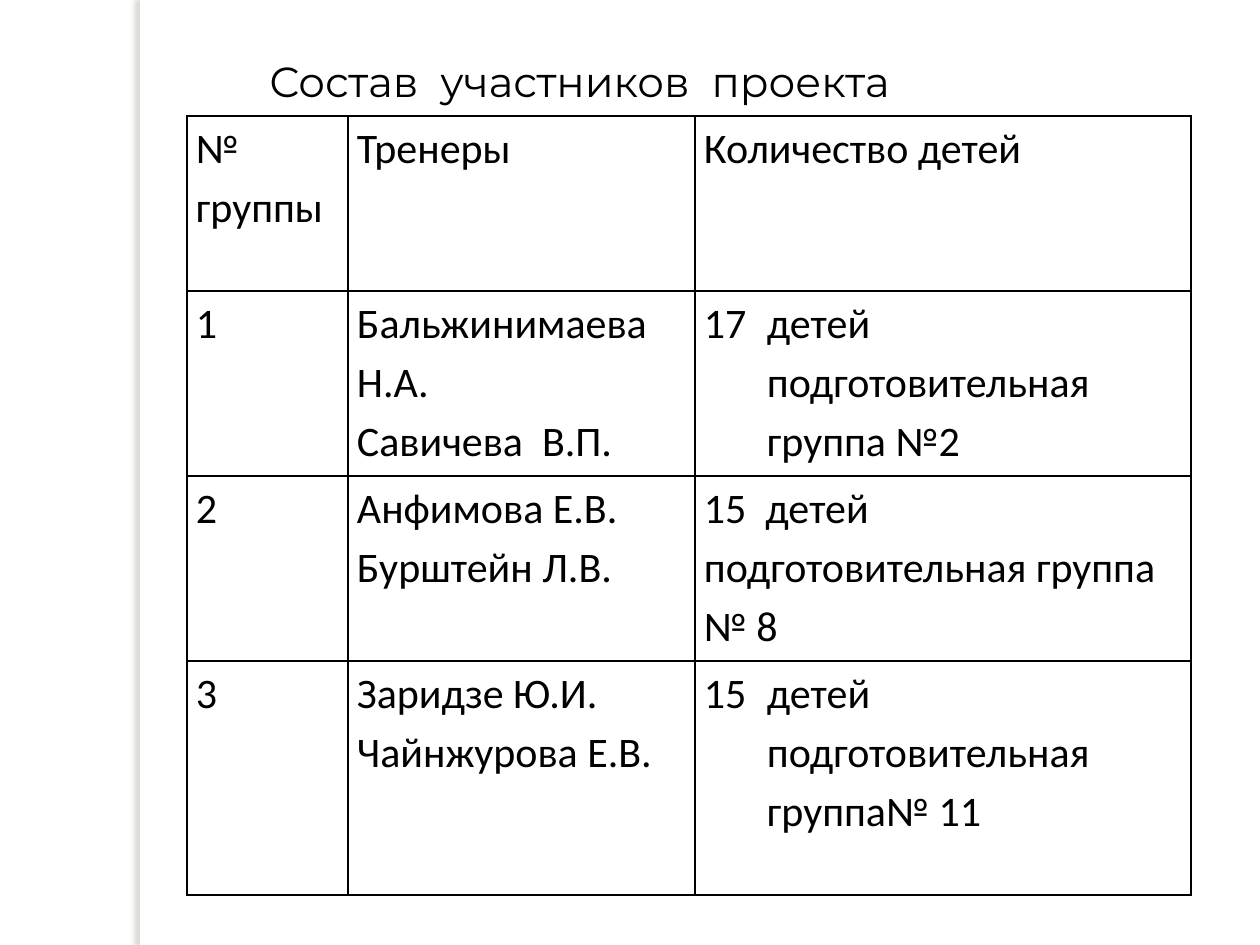
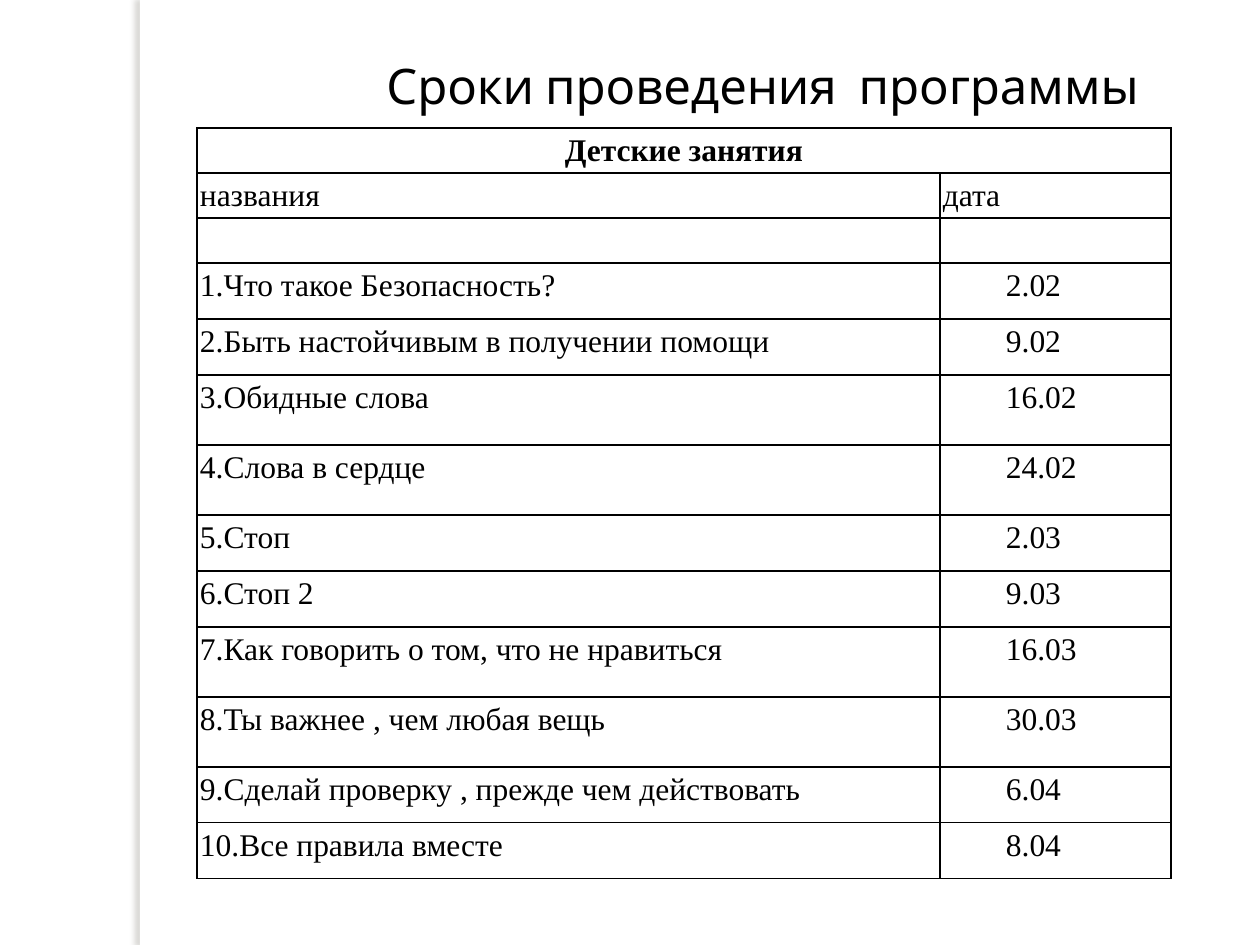
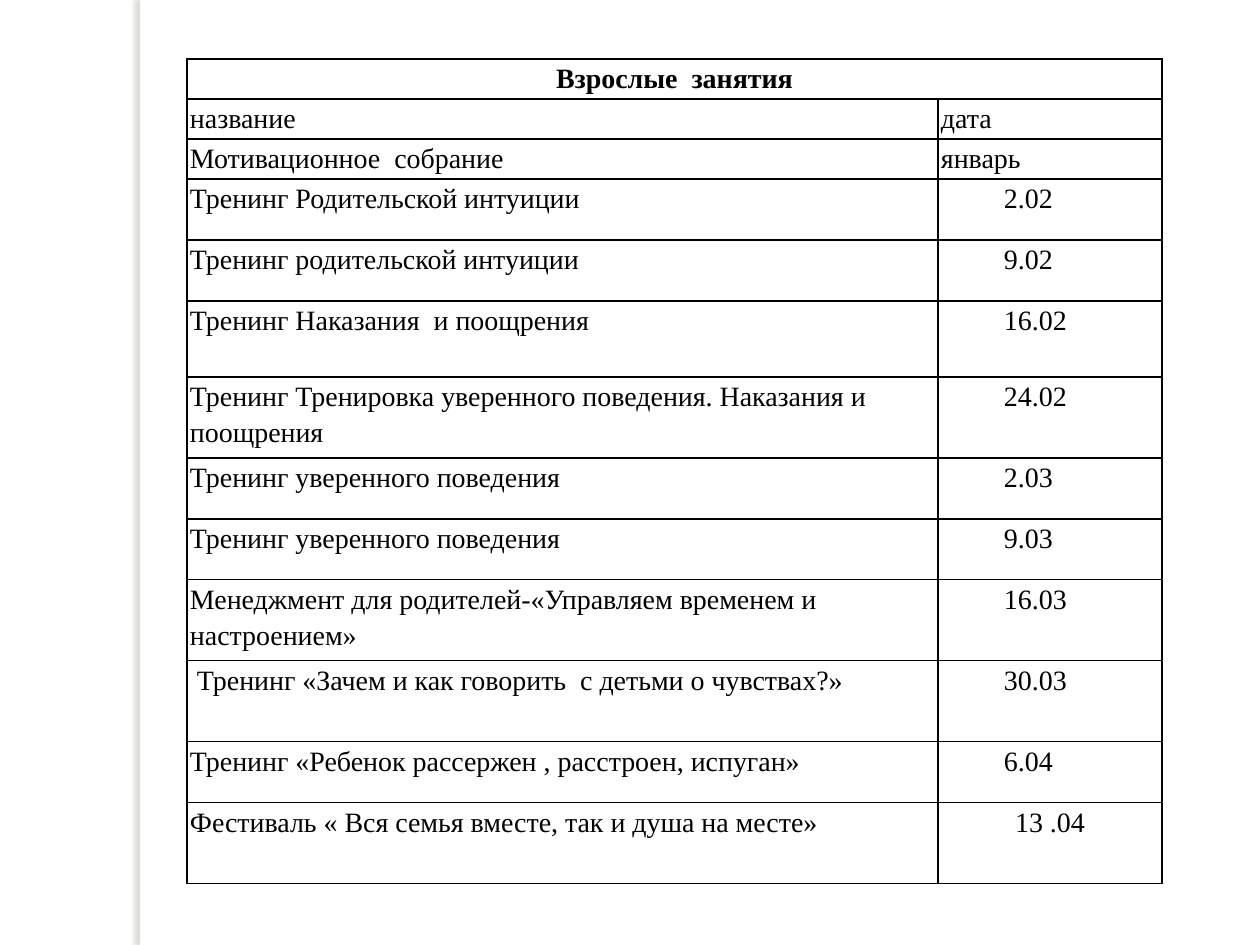
import pptx
import pptx.chart.data
import pptx.dml.color
import pptx.enum.shapes
import pptx.enum.text
import pptx.oxml
import pptx.oxml.ns
import pptx.util

COLORS = {"paper": "FFFFFF", "ink": "000000", "shade": "736F63"}
CENTER = pptx.enum.text.PP_ALIGN.CENTER


class Deck:
    """Holds the shared style and the current slide, with lengths in px."""

    SCALE = 914400 / 126
    INDENT = 63

    def __init__(self):
        self.deck = pptx.Presentation()
        self.deck.slide_width = self.emu(1260)
        self.deck.slide_height = self.emu(945)

    def emu(self, px):
        return pptx.util.Emu(round(px * self.SCALE))

    def color(self, name):
        return pptx.dml.color.RGBColor.from_string(COLORS[name])

    def xml(self, parent, markup, index=None):
        space = pptx.oxml.ns.nsdecls("a")
        tag, rest = markup[:-1].split(">", 1) if ">" in markup[:-1] else (markup[:-2], None)
        full = f"{tag} {space}/>" if rest is None else f"{tag} {space}>{rest}>"
        element = pptx.oxml.parse_xml(full)
        parent.insert(len(parent) if index is None else index, element)

    def page(self):
        self.slide = self.deck.slides.add_slide(self.deck.slide_layouts[6])
        self.slide.background.fill.solid()
        self.slide.background.fill.fore_color.rgb = self.color("paper")
        band = self.slide.shapes.add_shape(
            pptx.enum.shapes.MSO_SHAPE.RECTANGLE,
            self.emu(140), 0, self.emu(10), self.emu(945))
        band.fill.solid()
        band.fill.fore_color.rgb = self.color("paper")
        band.line.fill.background()
        band.shadow.inherit = False
        effects = band._element.spPr.find(pptx.oxml.ns.qn("a:effectLst"))
        self.xml(effects, '<a:outerShdw blurRad="38100" dist="38100" dir="10800000">'
                 f'<a:srgbClr val="{COLORS["shade"]}"><a:alpha val="25000"/></a:srgbClr>'
                 '</a:outerShdw>')

    def style(self, para, font, size, bold=False):
        for span in para.runs:
            span.font.name = font
            span.font.size = pptx.util.Pt(size)
            span.font.bold = bold
            span.font.color.rgb = self.color("ink")

    def indent(self, para, left, first=0):
        settings = para._p.get_or_add_pPr()
        settings.set("marL", str(self.emu(left)))
        settings.set("indent", str(self.emu(first)))

    def title(self, text, left, width, font, size):
        box = self.slide.shapes.add_textbox(
            self.emu(left), self.emu(49), self.emu(width), self.emu(111))
        box.text_frame.word_wrap = True
        box.text_frame.text = text
        self.style(box.text_frame.paragraphs[0], font, size)

    def table(self, left, top, widths, heights, rows, font, size, inset):
        frame = self.slide.shapes.add_table(
            len(rows), len(widths), self.emu(left), self.emu(top),
            self.emu(sum(widths)), self.emu(sum(heights)))
        table = frame.table
        table.first_row = table.horz_banding = False
        for column, width in zip(table.columns, widths):
            column.width = self.emu(width)
        for row, height, texts in zip(table.rows, heights, rows):
            row.height = self.emu(height)
            for cell, text in zip(row.cells, texts):
                self.cell(cell, text, font, size, inset)
        return table

    def cell(self, cell, text, font, size, inset):
        cell.margin_left = cell.margin_right = self.emu(inset)
        cell.margin_top = cell.margin_bottom = 0
        cell.text_frame.text = text
        for para in cell.text_frame.paragraphs:
            para.line_spacing = 1.15
            self.style(para, font, size)
        cell.fill.background()
        for index, side in enumerate("LRTB"):
            self.xml(cell._tc.get_or_add_tcPr(),
                     f'<a:ln{side} w="12700"><a:solidFill><a:srgbClr val="{COLORS["ink"]}"/>'
                     f'</a:solidFill></a:ln{side}>', index)

    def number(self, cell, start):
        para = cell.text_frame.paragraphs[0]
        self.indent(para, self.INDENT, -self.INDENT)
        self.xml(para._p.get_or_add_pPr(),
                 f'<a:buAutoNum type="arabicPlain" startAt="{start}"/>')

    def schedule(self, left, top, widths, heading, lessons, size):
        heights = [lesson[0] for lesson in lessons]
        rows = [(heading, "")] + [lesson[1:] for lesson in lessons]
        table = self.table(left, top, widths, heights[:1] + heights, rows,
                           "Times New Roman", size, 3)
        table.cell(0, 0).merge(table.cell(0, 1))
        para = table.cell(0, 0).text_frame.paragraphs[0]
        para.alignment = CENTER
        para.runs[0].font.bold = True
        for index, (name, date) in enumerate(rows):
            if date[:1].isdigit():
                self.indent(table.cell(index, 1).text_frame.paragraphs[0], self.INDENT)
        return table


TRAINERS = [
    ("№ группы", "Тренеры", "Количество детей"),
    ("1", "Бальжинимаева Н.А.\nСавичева  В.П.", "детей подготовительная группа №2"),
    ("2", "Анфимова Е.В.\nБурштейн Л.В.", "15  детей подготовительная группа № 8"),
    ("3", "Заридзе Ю.И.\nЧайнжурова Е.В.", "детей подготовительная группа№ 11"),
]
CHILD_LESSONS = [
    (45, "названия", "дата"),
    (45, "", ""),
    (56, "1.Что такое Безопасность?", "2.02"),
    (56, "2.Быть настойчивым в получении помощи", "9.02"),
    (70, "3.Обидные слова", "16.02"),
    (70, "4.Слова в сердце", "24.02"),
    (56, "5.Стоп", "2.03"),
    (56, "6.Стоп 2", "9.03"),
    (70, "7.Как говорить о том, что не нравиться", "16.03"),
    (70, "8.Ты важнее , чем любая вещь", "30.03"),
    (56, "9.Сделай проверку , прежде чем действовать", "6.04"),
    (56, "10.Все правила вместе", "8.04"),
]
ADULT_LESSONS = [
    (40, "название", "дата"),
    (40, "Мотивационное  собрание", "январь"),
    (61, "Тренинг Родительской интуиции", "2.02"),
    (61, "Тренинг родительской интуиции", "9.02"),
    (76, "Тренинг Наказания  и поощрения", "16.02"),
    (81, "Тренинг Тренировка уверенного поведения. Наказания и поощрения", "24.02"),
    (61, "Тренинг уверенного поведения", "2.03"),
    (61, "Тренинг уверенного поведения", "9.03"),
    (81, "Менеджмент для родителей-«Управляем временем и настроением»", "16.03"),
    (81, " Тренинг «Зачем и как говорить  с детьми о чувствах?»", "30.03"),
    (61, "Тренинг «Ребенок рассержен , расстроен, испуган»", "6.04"),
    (81, "Фестиваль « Вся семья вместе, так и душа на месте»", "13 .04"),
]


def main():
    deck = Deck()

    deck.page()
    deck.title("Состав  участников  проекта", 257, 866, "Montserrat", 24)
    groups = deck.table(187, 116, [161, 347, 496], [175, 185, 185, 234],
                        TRAINERS, "Calibri", 24, 9)
    deck.number(groups.cell(1, 2), 17)
    deck.number(groups.cell(3, 2), 15)

    deck.page()
    deck.title("Сроки проведения  программы", 374, 798, "Cabin", 28)
    deck.schedule(197, 128, [743, 231], "Детские занятия", CHILD_LESSONS, 18)

    deck.page()
    adults = deck.schedule(187, 59, [751, 224], "Взрослые  занятия", ADULT_LESSONS, 16)
    festival = adults.cell(len(ADULT_LESSONS), 1).text_frame.paragraphs[0]
    deck.indent(festival, 0)
    festival.alignment = CENTER

    deck.deck.save("out.pptx")


if __name__ == "__main__":
    main()
